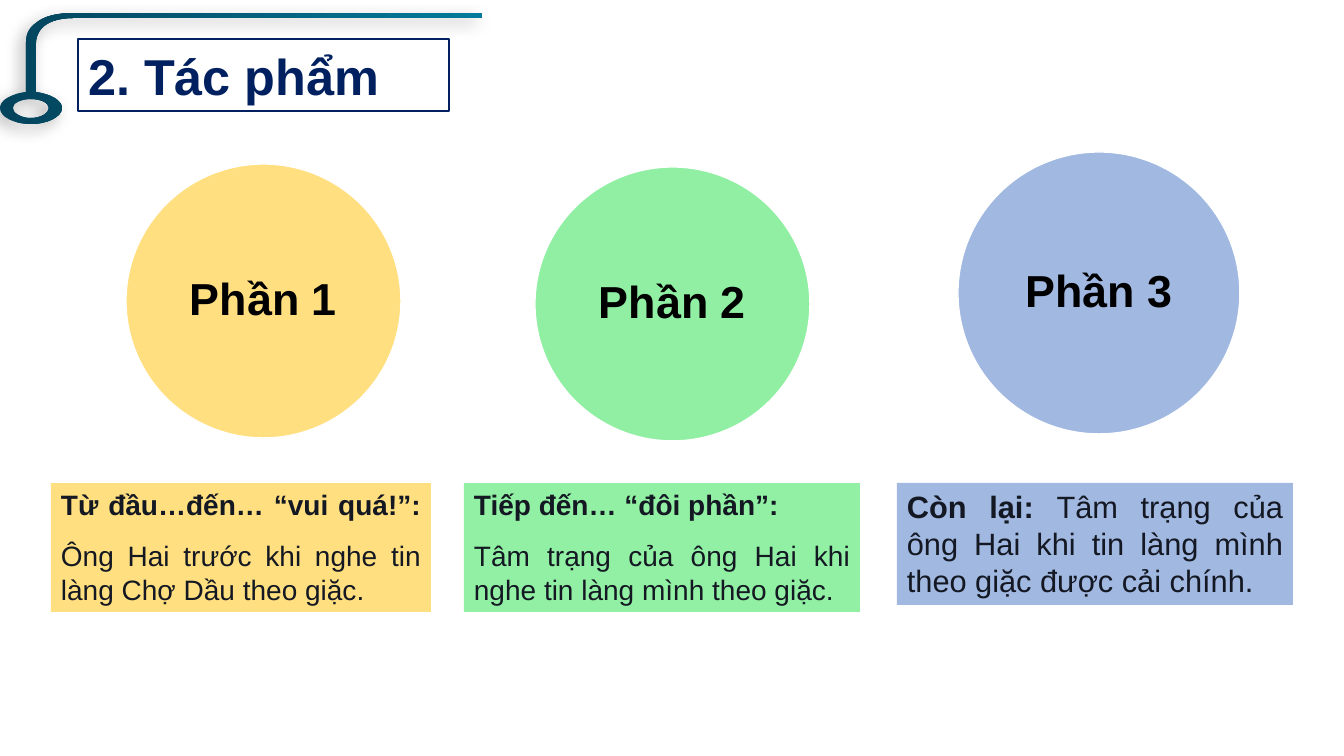
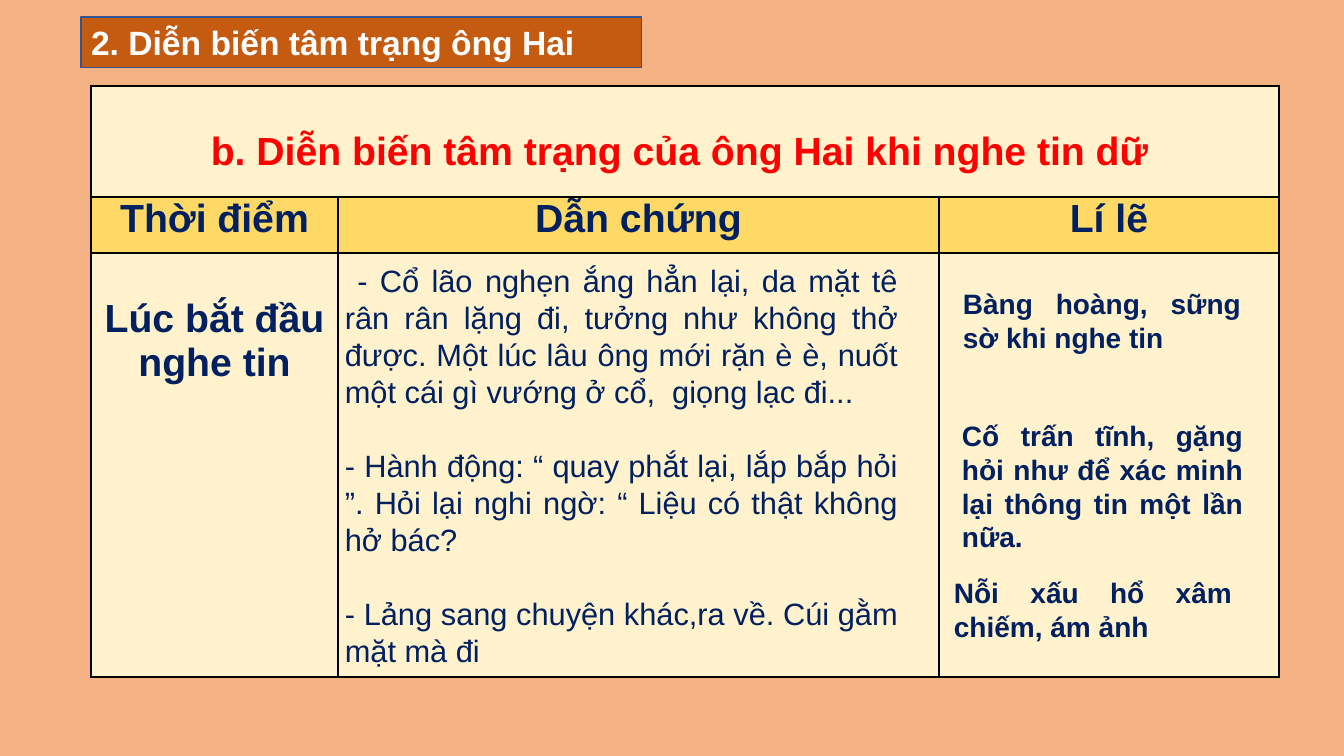
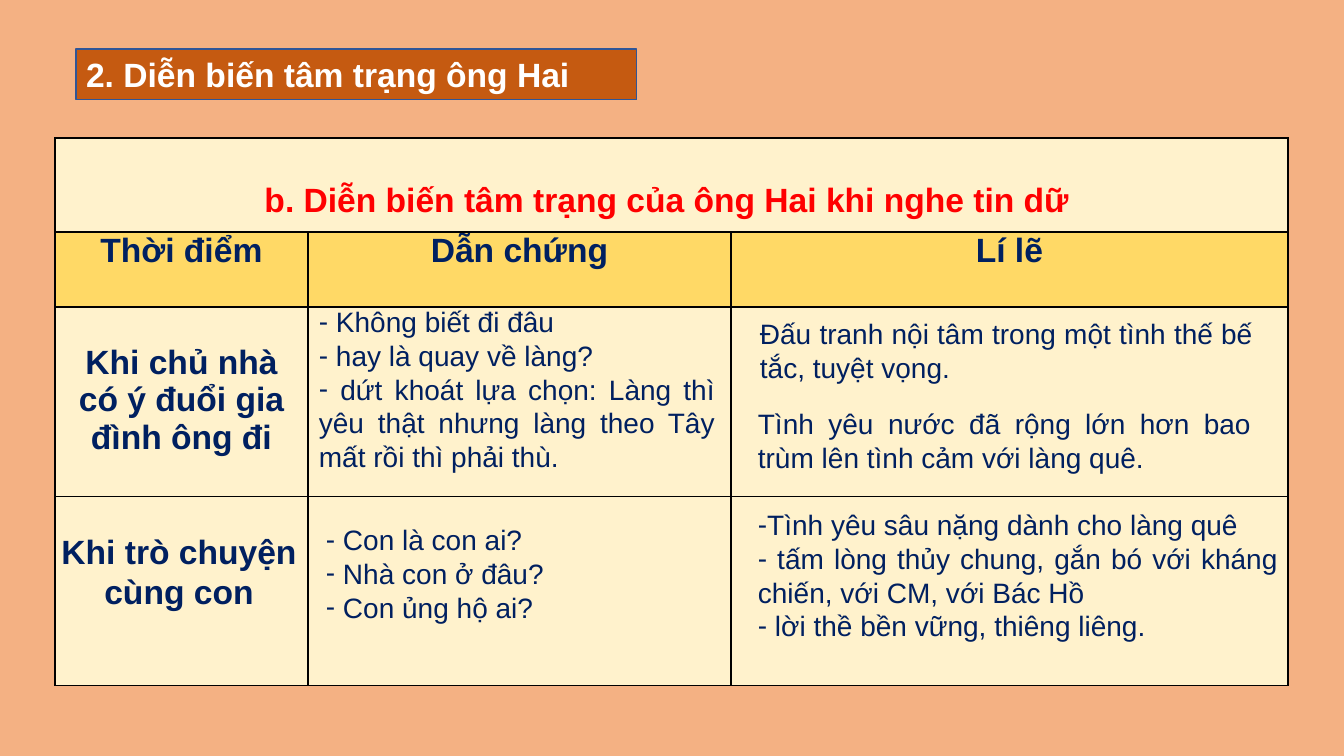
from pptx import Presentation, util as u
from pptx.dml.color import RGBColor
from pptx.enum import shapes, text
from pptx.oxml.xmlchemy import OxmlElement

PX = 12192000 / 1344  # EMU per px
NAVY, INK, WHITE, CREAM, GOLD = "002060", "141823", "FFFFFF", "FFF2CC", "FFD966"
RUST, PEACH, RED, BLACK = "C55A11", "F4B183", "FF0000", "000000"
LEFT, MID, JUST = text.PP_ALIGN.LEFT, text.PP_ALIGN.CENTER, text.PP_ALIGN.JUSTIFY
TOP, CTR = text.MSO_ANCHOR.TOP, text.MSO_ANCHOR.MIDDLE
hue = RGBColor.from_string


def px(*nums):
    return [u.Emu(round(n * PX)) for n in nums]


def write(frame, paras, size=20, color=NAVY, bold=False, align=JUST, anchor=TOP,
          before=0, after=0, gap=0, lead=None, dash=False):
    """Fill a frame; a (head, rest) pair gives a bold head and plain rest."""
    frame.word_wrap, frame.vertical_anchor = True, anchor
    for i, para in enumerate(paras):
        p = frame.add_paragraph() if i else frame.paragraphs[0]
        p.alignment = align
        if lead:
            p.line_spacing = lead
        p.space_before = u.Pt(gap if i and gap else before)
        p.space_after = u.Pt(after)
        if dash:
            face, mark = OxmlElement("a:buFont"), OxmlElement("a:buChar")
            face.set("typeface", "Arial")
            mark.set("char", "-")
            p._p.get_or_add_pPr().extend([face, mark])
        pair = [(para, bold)] if isinstance(para, str) else zip(para, (True, False))
        for words, heavy in pair:
            run = p.add_run()
            run.text = words
            font = run.font
            font.name, font.size, font.bold = "Arial", u.Pt(size), heavy
            font.color.rgb = hue(color)


deck = Presentation()
deck.slide_width, deck.slide_height = px(1344, 756)
layout = deck.slide_layouts[5]

# Titles: words, place, size, text colour, fill, line, line width, background
HEAD = "2. Diễn biến tâm trạng ông Hai"
titles = [
    ("2. Tác phẩm", (78, 39, 371, 72), 36, NAVY, None, NAVY, 1.5, WHITE),
    (HEAD, (81, 17, 561, 51), 24, WHITE, RUST, "2F5597", 0.75, PEACH),
    (HEAD, (76, 49, 561, 51), 24, WHITE, RUST, "2F5597", 0.75, PEACH),
]
pages = []
for words, place, size, color, fill, line, width, back in titles:
    page = deck.slides.add_slide(layout)
    page.background.fill.solid()
    page.background.fill.fore_color.rgb = hue(back)
    title = page.shapes.title
    title.left, title.top, title.width, title.height = px(*place)
    if fill:
        title.fill.solid()
        title.fill.fore_color.rgb = hue(fill)
    title.line.color.rgb, title.line.width = hue(line), u.Pt(width)
    title.text_frame.auto_size = text.MSO_AUTO_SIZE.NONE
    write(title.text_frame, [words], size=size, color=color, bold=True,
          align=LEFT, anchor=CTR)
    pages.append(page)

# Slide 1: pipe ornament; two numbers make a line, six a curve
first = pages[0].shapes
pipe = [
    [(36, 23), (27, 29, 26, 37, 26, 43), (26, 92), (11, 94, 0, 100, 0, 108),
     (0, 117, 14, 124, 31, 124), (47, 124, 62, 117, 62, 108),
     (62, 100, 50, 94, 36, 92), (36, 43), (36, 36, 40, 18, 74, 18),
     (482, 18), (482, 13), (74, 13), (57, 13, 44, 16, 36, 23)],
    [(49, 108), (49, 113, 41, 118, 31, 118), (21, 118, 13, 113, 13, 108),
     (13, 103, 21, 99, 31, 99), (41, 99, 49, 103, 49, 108)],
]
form = first.build_freeform(*px(*pipe[0][0]))
for i, ring in enumerate(pipe):
    if i:
        form.move_to(*px(*ring[0]))
    form.add_line_segments([px(*step[-2:]) for step in ring[1:]], close=True)
tube = form.convert_to_shape()

# Bend the segments that have control points
steps = [step for ring in pipe for step in ring[1:]]
for leg, step in zip(list(tube._element.iter("{*}lnTo")), steps):
    if len(step) == 6:
        bend = OxmlElement("a:cubicBezTo")
        spots = px(*step)
        for x, y in zip(spots[::2], spots[1::2]):
            dot = OxmlElement("a:pt")
            dot.set("x", str(x - tube.left))
            dot.set("y", str(y - tube.top))
            bend.append(dot)
        leg.getparent().replace(leg, bend)
tube.line.fill.background()
tube.fill.gradient()
tube.fill.gradient_angle = 0
for stop, color, spot in zip(tube.fill.gradient_stops, ("03435C", "037A9B"), (0, 1)):
    stop.color.rgb, stop.position = hue(color), spot

# Soft shadow under the pipe
tube.shadow.inherit = False
glow = OxmlElement("a:outerShdw")
for key, val in (("blurRad", u.Pt(12)), ("dist", u.Pt(5)), ("dir", 135 * 60000)):
    glow.set(key, str(int(val)))
tint, fade = OxmlElement("a:srgbClr"), OxmlElement("a:alpha")
tint.set("val", BLACK)
fade.set("val", "30000")
tint.append(fade)
glow.append(tint)
tube._element.spPr.find("{*}effectLst").append(glow)

# Slide 1: circles with a box under each
parts = [
    ("FFC000", (126, 164, 275, 274), "FFDF7F", (51, 483, 380, 129), 20,
     [("Từ đầu…đến… “vui quá!”: ",),
      "Ông Hai trước khi nghe tin làng Chợ Dầu theo giặc."]),
    ("23E148", (535, 167, 275, 274), "91F0A3", (464, 483, 396, 129), 20,
     [("Tiếp đến… “đôi phần”: ",),
      "Tâm trạng của ông Hai khi nghe tin làng mình theo giặc."]),
    ("4472C4", (958, 152, 282, 282), "A1B8E1", (897, 483, 396, 122), 22,
     [("Còn lại: ", "Tâm trạng của ông Hai khi tin làng mình theo giặc được cải chính.")]),
]
for n, (color, ring, pale, place, size, paras) in enumerate(parts, 1):
    disc = first.add_shape(shapes.MSO_SHAPE.OVAL, *px(*ring))
    card = first.add_shape(shapes.MSO_SHAPE.RECTANGLE, *px(*place))
    for shape, paint in ((disc, color), (card, pale)):
        shape.shadow.inherit = False
        shape.fill.solid()
        shape.fill.fore_color.rgb = hue(paint)
    disc.line.color.rgb, disc.line.width = hue(WHITE), u.Pt(1)
    fade = OxmlElement("a:alpha")
    fade.set("val", "50000")
    disc._element.spPr.find("{*}solidFill")[0].append(fade)
    card.line.fill.background()
    write(disc.text_frame, [f"Phần {n}"], size=32, color=BLACK, bold=True,
          align=MID, anchor=CTR, lead=0.9)
    write(card.text_frame, paras, size=size, color=INK, before=6, after=6)

# Slides 2 and 3: table place, columns, rows, text size, top gaps, row label
tables = [
    ((91, 86), (247, 601, 340), (111, 56, 424), 28, (44, 44), "Lúc bắt đầu nghe tin"),
    ((55, 138), (253, 423, 557), (94, 75, 190, 189), 24, (44, 37),
     "Khi chủ nhà có ý đuổi gia đình ông đi"),
]
for page, (spot, cols, rows, size, gaps, label) in zip(pages[1:], tables):
    grid = page.shapes.add_table(len(rows), 3, *px(*spot, sum(cols), sum(rows))).table
    grid.first_row = grid.horz_banding = False
    for col, wide in zip(grid.columns, px(*cols)):
        col.width = wide
    for row, high in zip(grid.rows, px(*rows)):
        row.height = high
    grid.cell(0, 0).merge(grid.cell(0, 2))
    words = {(0, 0): "b. Diễn biến tâm trạng của ông Hai khi nghe tin dữ ",
             (1, 0): "Thời điểm", (1, 1): "Dẫn chứng", (1, 2): "Lí lẽ", (2, 0): label}
    drop = {(0, 0): gaps[0], (2, 0): gaps[1]}
    for r in range(len(rows)):
        for c in range(3):
            cell = grid.cell(r, c)
            cell.fill.solid()
            cell.fill.fore_color.rgb = hue(GOLD if r == 1 else CREAM)
            cell.margin_left, cell.margin_right, cell.margin_top, cell.margin_bottom = px(
                7, 7, drop.get((r, c), 0), 0)
            for i, side in enumerate(("a:lnL", "a:lnR", "a:lnT", "a:lnB")):
                edge = OxmlElement(side)
                edge.set("w", str(u.Pt(1)))
                solid, tint = OxmlElement("a:solidFill"), OxmlElement("a:srgbClr")
                tint.set("val", BLACK)
                solid.append(tint)
                edge.append(solid)
                cell._tc.get_or_add_tcPr().insert(i, edge)
            if (r, c) in words:
                write(cell.text_frame, [words[r, c]], size=size, bold=True, align=MID,
                      color=NAVY if r else RED)

# Text over the table cells
strong = dict(bold=True)
dashed = dict(dash=True)
notes = [
    (1, (335, 257, 573, 420), dict(size=22, gap=26.5), [
        " - Cổ lão nghẹn ắng hẳn lại, da mặt tê rân rân lặng đi, tưởng như không thở được. "
        "Một lúc lâu ông mới rặn è è, nuốt một cái gì vướng ở cổ,  giọng lạc đi...",
        "- Hành động: “ quay phắt lại, lắp bắp hỏi ”. Hỏi lại nghi ngờ: "
        "“ Liệu có thật không hở bác?",
        "- Lảng sang chuyện khác,ra về. Cúi gằm mặt mà đi"]),
    (1, (953, 282, 298, 78), strong, ["Bàng hoàng, sững sờ khi nghe tin"]),
    (1, (944, 571, 298, 78), strong, ["Nỗi xấu hổ xâm chiếm, ám ảnh"]),
    (1, (952, 414, 301, 146), strong,
     ["Cố trấn tĩnh, gặng hỏi như để xác minh lại thông tin một lần nữa."]),
    (2, (309, 300, 416, 179), dashed, [
        " Không biết đi đâu", " hay là quay về làng?",
        " dứt khoát lựa chọn: Làng thì yêu thật nhưng làng theo Tây mất rồi thì phải thù."]),
    (2, (750, 312, 513, 78), {},
     ["Đấu tranh nội tâm trong một tình thế bế tắc, tuyệt vọng."]),
    (2, (316, 518, 386, 112), dashed,
     [" Con là con ai?", " Nhà con ở đâu?", " Con ủng hộ ai?"]),
    (2, (748, 503, 540, 146), dashed, [
        "Tình yêu sâu nặng dành cho làng quê",
        " tấm lòng thủy chung, gắn bó với kháng chiến, với CM, với Bác Hồ",
        " lời thề bền vững, thiêng liêng."]),
    (2, (748, 402, 513, 78), {},
     ["Tình yêu nước đã rộng lớn hơn bao trùm lên tình cảm với làng quê."]),
    (2, (49, 526, 260, 92), dict(size=24, bold=True, align=MID),
     ["Khi trò chuyện cùng con"]),
]
for n, place, style, paras in notes:
    box = pages[n].shapes.add_textbox(*px(*place))
    write(box.text_frame, paras, **style)

deck.save("out.pptx")
